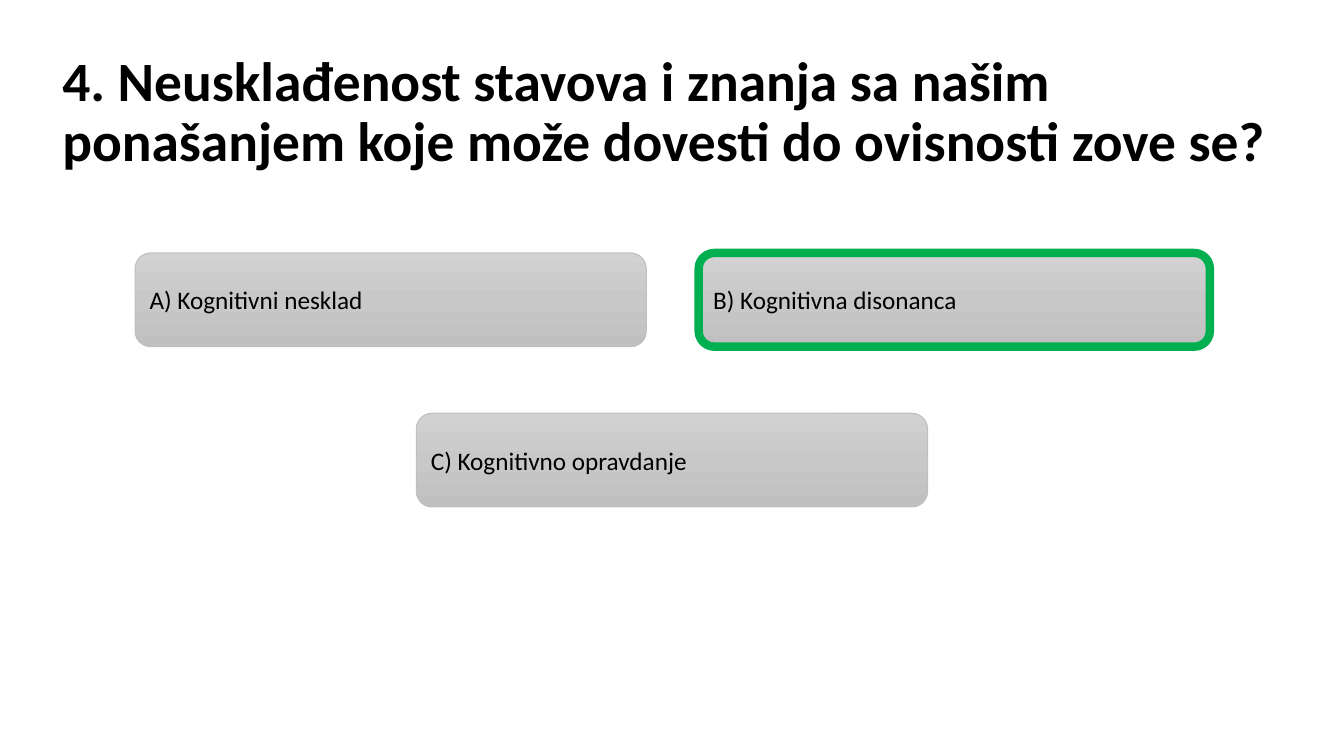
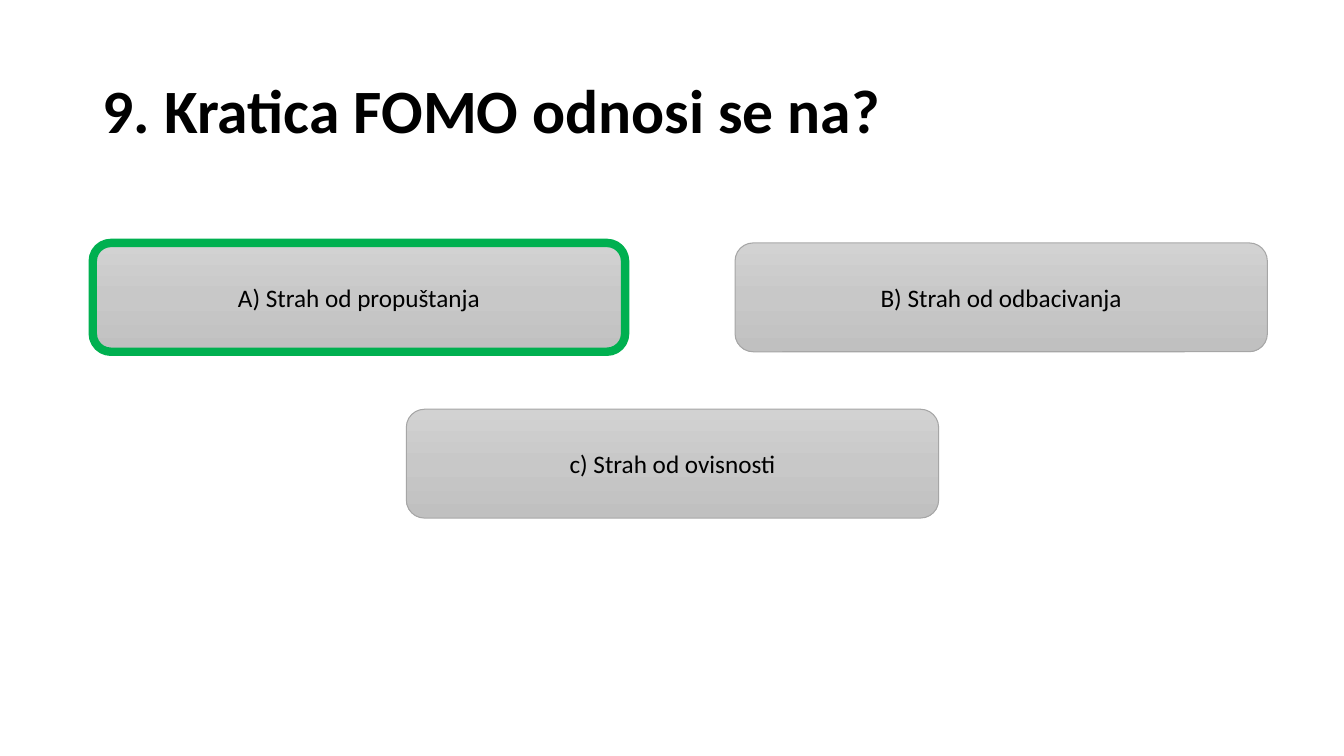
from copy import deepcopy
from pptx import Presentation, util as u
from pptx.dml.color import RGBColor
from pptx.enum import shapes, text
from pptx.oxml.ns import qn

W, H = 13.33, 7.5
FONT = "Calibri"
COLORS = {"text": "000000", "correct": "00B050",
          "top": "D2D2D2", "middle": "C8C8C8", "bottom": "C0C0C0"}
QUESTIONS = [
    {"title": "4. Neusklađenost stavova i znanja sa našim ponašanjem koje može dovesti do ovisnosti zove se?",
     "title_left": 0.52, "title_width": 12.46, "title_size": 39.6,
     "answers": ["A) Kognitivni nesklad", "B) Kognitivna disonanca", "C) Kognitivno opravdanje"],
     "correct": 1, "border": "BFBFBF", "align": text.PP_ALIGN.LEFT,
     "size": (5.07, 0.93), "lefts": (1.34, 6.93, 4.13), "rows": (2.51, 4.1)},
    {"title": "9. Kratica FOMO odnosi se na?",
     "title_left": 0.92, "title_width": 11.5, "title_size": 44,
     "answers": ["A) Strah od propuštanja", "B) Strah od odbacivanja", "c) Strah od ovisnosti"],
     "correct": 0, "border": "A6A6A6", "align": text.PP_ALIGN.CENTER,
     "size": (5.28, 1.08), "lefts": (0.92, 7.29, 4.03), "rows": (2.41, 4.06)},
]


def rgb(value):
    return RGBColor.from_string(value)


def write(sp, content, size, align, bold=False):
    tf = sp.text_frame
    tf.word_wrap = True
    tf.vertical_anchor = text.MSO_ANCHOR.MIDDLE
    p = tf.paragraphs[0]
    p.text = content
    p.alignment = align
    p.font.name = FONT
    p.font.size = u.Pt(size)
    p.font.bold = bold
    p.font.color.rgb = rgb(COLORS["text"])
    return p


def shade(sp):
    sp.fill.gradient()
    sp.fill.gradient_angle = 270
    stops = sp._element.spPr.find(qn("a:gradFill")).find(qn("a:gsLst"))
    stops.insert(1, deepcopy(stops[0]))
    for i, (stop, name) in enumerate(zip(sp.fill.gradient_stops, ("top", "middle", "bottom"))):
        stop.position = i / 2
        stop.color.rgb = rgb(COLORS[name])


def add_title(s, q):
    sp = s.shapes.add_textbox(*map(u.Inches, (q["title_left"], 0.4, q["title_width"], 1.45)))
    p = write(sp, q["title"], q["title_size"], text.PP_ALIGN.LEFT, True)
    p.line_spacing = 0.9


def add_answer(s, q, i):
    box = (q["lefts"][i], q["rows"][i // 2], *q["size"])
    sp = s.shapes.add_shape(shapes.MSO_SHAPE.ROUNDED_RECTANGLE, *map(u.Inches, box))
    sp.shadow.inherit = False
    shade(sp)
    correct = i == q["correct"]
    sp.line.color.rgb = rgb(COLORS["correct"] if correct else q["border"])
    sp.line.width = u.Pt(6 if correct else 0.75)
    write(sp, q["answers"][i], 18, q["align"])


def main():
    prs = Presentation()
    prs.slide_width, prs.slide_height = u.Inches(W), u.Inches(H)
    for q in QUESTIONS:
        s = prs.slides.add_slide(prs.slide_layouts[6])
        add_title(s, q)
        for i in range(len(q["answers"])):
            add_answer(s, q, i)
    prs.save("out.pptx")


if __name__ == "__main__":
    main()
